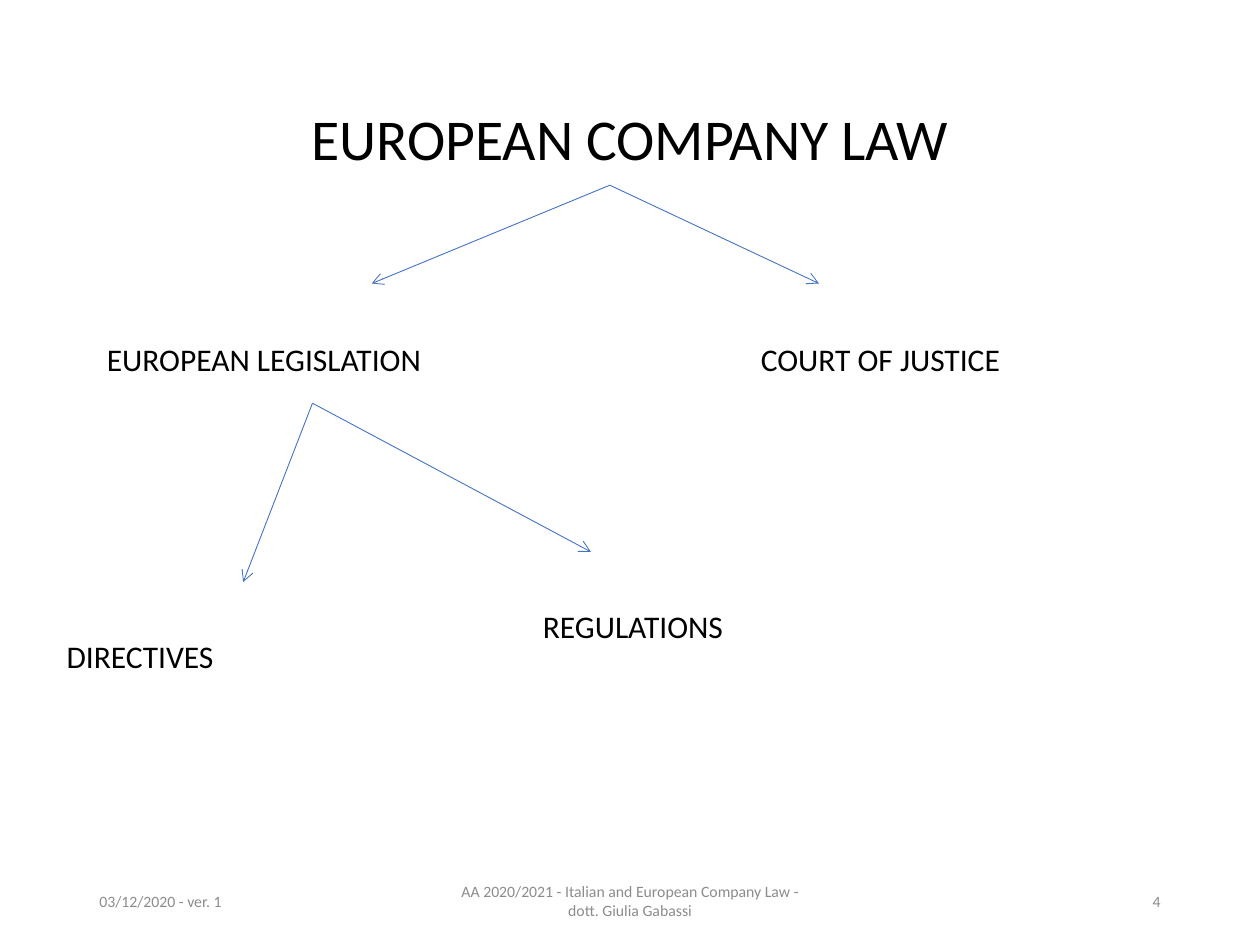
from lxml.etree import SubElement
from pptx import Presentation
from pptx.dml.color import RGBColor as Rgb
from pptx.enum.shapes import MSO_CONNECTOR as Connector
from pptx.enum.text import MSO_ANCHOR as Anchor, PP_ALIGN as Align
from pptx.oxml.ns import qn
from pptx.util import Inches, Pt

THEME = {
    "font": "Calibri",
    "ink": Rgb.from_string("000000"),
    "muted": Rgb.from_string("8C8C8C"),
    "arrow": Rgb.from_string("4472C4"),
    "title": 33, "topic": 18, "footer": 9, "stroke": 0.5,
}

# Grid: 100 columns by 75 rows on a 10 x 7.5 inch slide
COLUMNS, ROWS = 100, 75
MARGIN = 6.9
FOOTER_TOP, FOOTER_ROWS = 69.5, 4

TITLE = ("EUROPEAN COMPANY LAW", (MARGIN, 4, COLUMNS - 2 * MARGIN, 14.5))
TOPICS = [
    ("EUROPEAN LEGISLATION", (7.5, 26.5, 34.6, 4)),
    ("COURT OF JUSTICE", (59.4, 26.5, 32.3, 4)),
    ("DIRECTIVES", (4.3, 50.1, 26.8, 4)),
    ("REGULATIONS", (42.1, 47.7, 29.9, 7.1)),
]
# Each branching point with the arrow tips it leads to
BRANCHES = [
    ((48.4, 14.7), [(29.5, 22.5), (65, 22.5)]),
    ((24.8, 32), [(19.3, 46.2), (46.9, 43.8)]),
]
SIDE, MIDDLE = 22.5, 33.8
FOOTERS = [
    ("03/12/2020 - ver. 1", MARGIN, SIDE, Align.LEFT),
    ("AA 2020/2021 - Italian and European Company Law -\ndott. Giulia Gabassi",
     (COLUMNS - MIDDLE) / 2, MIDDLE, Align.CENTER),
    ("4", COLUMNS - MARGIN - SIDE, SIDE, Align.RIGHT),
]

deck = Presentation()
deck.slide_width, deck.slide_height = Inches(10), Inches(7.5)
slide = deck.slides.add_slide(deck.slide_layouts[6])


def on_grid(*pairs):
    """Turn alternating column and row numbers into slide lengths."""
    units = (deck.slide_width / COLUMNS, deck.slide_height / ROWS)
    return [round(value * units[i % 2]) for i, value in enumerate(pairs)]


def add_text(text, area, size, color=THEME["ink"], align=Align.LEFT,
             anchor=Anchor.TOP, spacing=1.0):
    frame = slide.shapes.add_textbox(*on_grid(*area)).text_frame
    frame.word_wrap = True
    frame.vertical_anchor = anchor
    paragraph = frame.paragraphs[0]
    paragraph.alignment = align
    paragraph.line_spacing = spacing
    for number, line in enumerate(text.split("\n")):
        if number:
            paragraph.add_line_break()
        run = paragraph.add_run()
        run.text = line
        run.font.name = THEME["font"]
        run.font.size = Pt(size)
        run.font.color.rgb = color


def add_arrow(start, tip):
    arrow = slide.shapes.add_connector(Connector.STRAIGHT, *on_grid(*start, *tip))
    arrow.line.color.rgb = THEME["arrow"]
    arrow.line.width = Pt(THEME["stroke"])
    SubElement(arrow.line._get_or_add_ln(), qn("a:tailEnd"), type="arrow")
    SubElement(arrow._element.spPr, qn("a:effectLst"))


title, title_area = TITLE
add_text(title, title_area, THEME["title"], align=Align.CENTER,
         anchor=Anchor.MIDDLE, spacing=0.9)
for topic, area in TOPICS:
    add_text(topic, area, THEME["topic"])
for start, tips in BRANCHES:
    for tip in tips:
        add_arrow(start, tip)
for footer, left, width, align in FOOTERS:
    add_text(footer, (left, FOOTER_TOP, width, FOOTER_ROWS), THEME["footer"],
             color=THEME["muted"], align=align, anchor=Anchor.MIDDLE)

deck.save("out.pptx")
